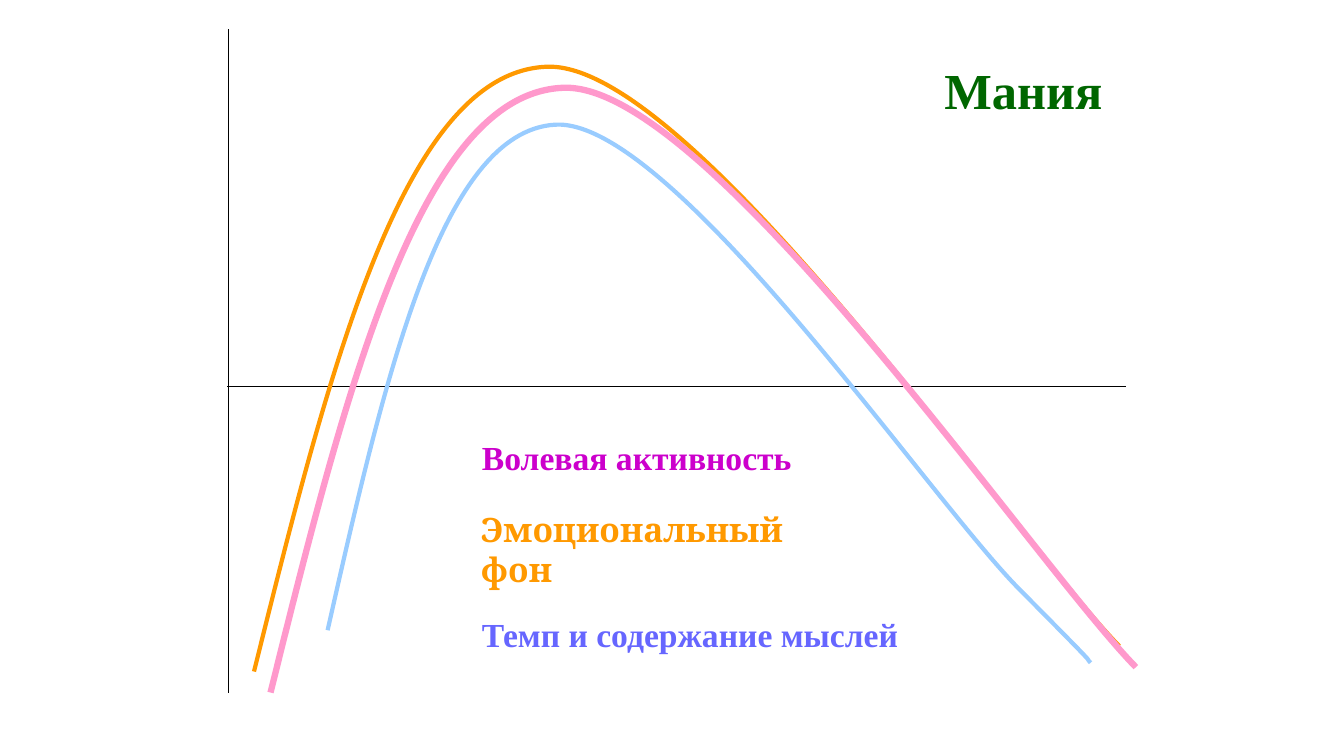
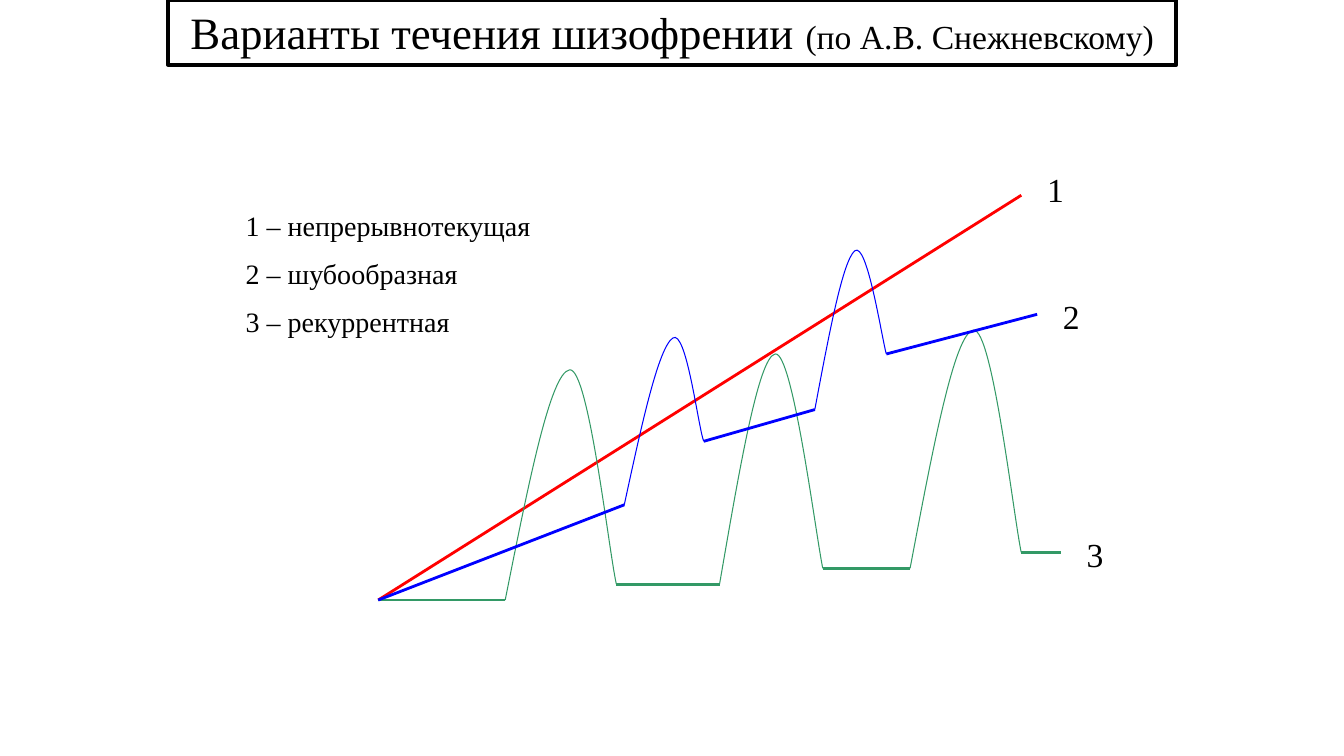
from dataclasses import dataclass

from pptx import Presentation, util as u
from pptx.dml.color import RGBColor
from pptx.enum import shapes, text
from pptx.oxml.ns import qn
from lxml import etree


class Theme:
    serif, alt = "Times New Roman", "Cambria"
    black, red, blue, green = "000000", "FF0000", "0000FF", "339966"
    sky, orange, pink = "99CCFF", "FF9900", "FF99CC"
    forest, purple, violet = "006600", "CC00CC", "6666FF"
    head, title, label, note = 36, 32, 24, 20
    thin, mid, bold, heavy = 0.75, 2, 3, 4.5
    gap = 10


CELL = u.Mm(2)


@dataclass
class Plot:
    slide: object
    left: float
    base: float

    def spot(self, point):
        col, row = point
        return round((self.left + col) * CELL), round((self.base - row) * CELL)

    def line(self, start, end, color, width):
        ends = self.spot(start) + self.spot(end)
        item = self.slide.shapes.add_connector(shapes.MSO_CONNECTOR.STRAIGHT, *ends)
        etree.SubElement(item._element.spPr, qn("a:effectLst"))
        stroke(item, color, width)

    def curve(self, points, color, width):
        first, *rest = [self.spot(p) for p in points]
        pen = self.slide.shapes.build_freeform(*first, scale=1.0)
        pen.add_line_segments(rest, close=False)
        item = pen.convert_to_shape()
        bend(item)
        item.shadow.inherit = False
        item.fill.background()
        stroke(item, color, width)

    def box(self, point, size):
        width, height = size
        return (*self.spot(point), round(width * CELL), round(height * CELL))


def bend(item):
    route = next(item._element.iter(qn("a:path")))
    legs = route.findall(qn("a:lnTo"))
    for i in range(0, len(legs), 3):
        cubic = etree.SubElement(route, qn("a:cubicBezTo"))
        for leg in legs[i:i + 3]:
            cubic.append(leg[0])
            route.remove(leg)


def stroke(item, color, width):
    item.line.color.rgb = RGBColor.from_string(color)
    item.line.width = u.Pt(width)


def style(font, size, color=Theme.black, face=Theme.serif, bold=False):
    font.size, font.name, font.bold = u.Pt(size), face, bold
    font.color.rgb = RGBColor.from_string(color)


def write(slide, box, lines, size, wrap=True, **look):
    frame = slide.shapes.add_textbox(*box).text_frame
    frame.word_wrap = wrap
    frame.auto_size = text.MSO_AUTO_SIZE.SHAPE_TO_FIT_TEXT
    for i, words in enumerate(lines):
        para = frame.paragraphs[0] if i == 0 else frame.add_paragraph()
        para.text = words
        style(para.font, size, **look)
        if i:
            para.space_before = u.Pt(Theme.gap)


def mania(slide):
    plot = Plot(slide, 28.8, 48.66)
    arch = [(0, 0), (9.4, 37.8), (18.8, 75.7), (37, 76.2),
            (55.1, 76.7), (96.1, 16.4), (109, 3.2)]
    mind = [(0, 0), (7.1, 31.4), (14.2, 62.9), (28.7, 63.7),
            (43.3, 64.5), (75.9, 16.4), (87.2, 5.1),
            (98.4, -6.2), (95, -2.9), (96.1, -4.1)]

    plot.line((-0.2, 0), (113, 0), Theme.black, Theme.thin)
    for col, row, form, color, width in (
        (12.47, -30.75, mind, Theme.sky, Theme.bold),
        (3.2, -35.95, arch, Theme.orange, Theme.bold),
        (5.28, -38.6, arch, Theme.pink, Theme.heavy),
    ):
        plot.curve([(col + x, row + y) for x, y in form], color, width)
        if form is mind:
            plot.line((0, 45), (0, -38.6), Theme.black, Theme.thin)

    for words, point, size, points, color, face, wrap in (
        ("Мания", (88.9, 41.8), (22.5, 8.9), Theme.head, Theme.forest, Theme.serif, False),
        ("Волевая активность", (30.66, -5.8), (41.7, 6.4), Theme.label,
         Theme.purple, Theme.serif, False),
        ("Эмоциональный фон", (30.5, -14.85), (43.8, 6.5), Theme.label,
         Theme.orange, Theme.alt, True),
        ("Темп и содержание мыслей", (30.66, -28.05), (55.2, 6.4), Theme.label,
         Theme.violet, Theme.serif, False),
    ):
        write(slide, plot.box(point, size), [words], points, wrap,
              color=color, face=face, bold=True)


def course(plot, nodes, humps, rows, color):
    for i, (start, end) in enumerate(zip(nodes, nodes[1:])):
        if i % 2 == 0:
            plot.line(start, end, color, Theme.mid)
            continue
        rise, peak = humps[i // 2]
        span = end[0] - start[0]
        cols = (0.35 * peak, 0.7 * peak, peak, peak + 0.17, 0.93)
        form = [(start[0] + x * span, start[1] + y * rise) for x, y in zip(cols, rows)]
        plot.curve([start, *form, end], color, Theme.thin)


def banner(slide, box):
    item = slide.shapes.add_shape(shapes.MSO_SHAPE.RECTANGLE, *box)
    item.shadow.inherit = False
    item.fill.background()
    stroke(item, Theme.black, Theme.bold)
    frame = item.text_frame
    frame.word_wrap = True
    frame.auto_size = text.MSO_AUTO_SIZE.SHAPE_TO_FIT_TEXT
    frame.vertical_anchor = text.MSO_ANCHOR.TOP
    para = frame.paragraphs[0]
    para.alignment = text.PP_ALIGN.CENTER
    for words, size in (("Варианты течения шизофрении ", Theme.title),
                        ("(по А.В. Снежневскому)", Theme.label)):
        run = para.add_run()
        run.text = words
        style(run.font, size)


def types(slide):
    plot = Plot(slide, 47.64, 75.6)
    steep = (0.49, 0.99, 1, 1.01, 0.22)
    soft = (0.47, 0.94, 1, 1.06, 0.47)
    steady = [(0, 0), (81, 51)]
    waves = [(0, 0), (16, 0), (30, 2), (43, 2), (56, 4), (67, 4), (81, 6), (86, 6)]
    climbs = [(0, 0), (31, 12), (41, 20), (55, 24), (64, 31), (83, 36)]

    course(plot, steady, [], [], Theme.red)
    course(plot, waves, [(29, 0.58), (29, 0.54), (30, 0.57)], steep, Theme.green)
    course(plot, climbs, [(21, 0.61), (20, 0.56)], soft, Theme.blue)
    for mark, nodes, lift in (("1", steady, 4), ("2", climbs, 3), ("3", waves, 3)):
        col, row = nodes[-1]
        write(slide, plot.box((col + 2, row + lift), (5, 6.4)), [mark], Theme.label)

    page = Plot(slide, 0, 0)
    banner(slide, page.box((21.17, 0), (127, 8.15)))
    write(slide, page.box((29.7, -25.7), (50, 18.2)),
          ["1 – непрерывнотекущая", "2 – шубообразная", "3 – рекуррентная"], Theme.note)


def main():
    deck = Presentation()
    deck.slide_width, deck.slide_height = u.Inches(13.33), u.Inches(7.5)
    for draw in (mania, types):
        draw(deck.slides.add_slide(deck.slide_layouts[6]))
    deck.save("out.pptx")


if __name__ == "__main__":
    main()
